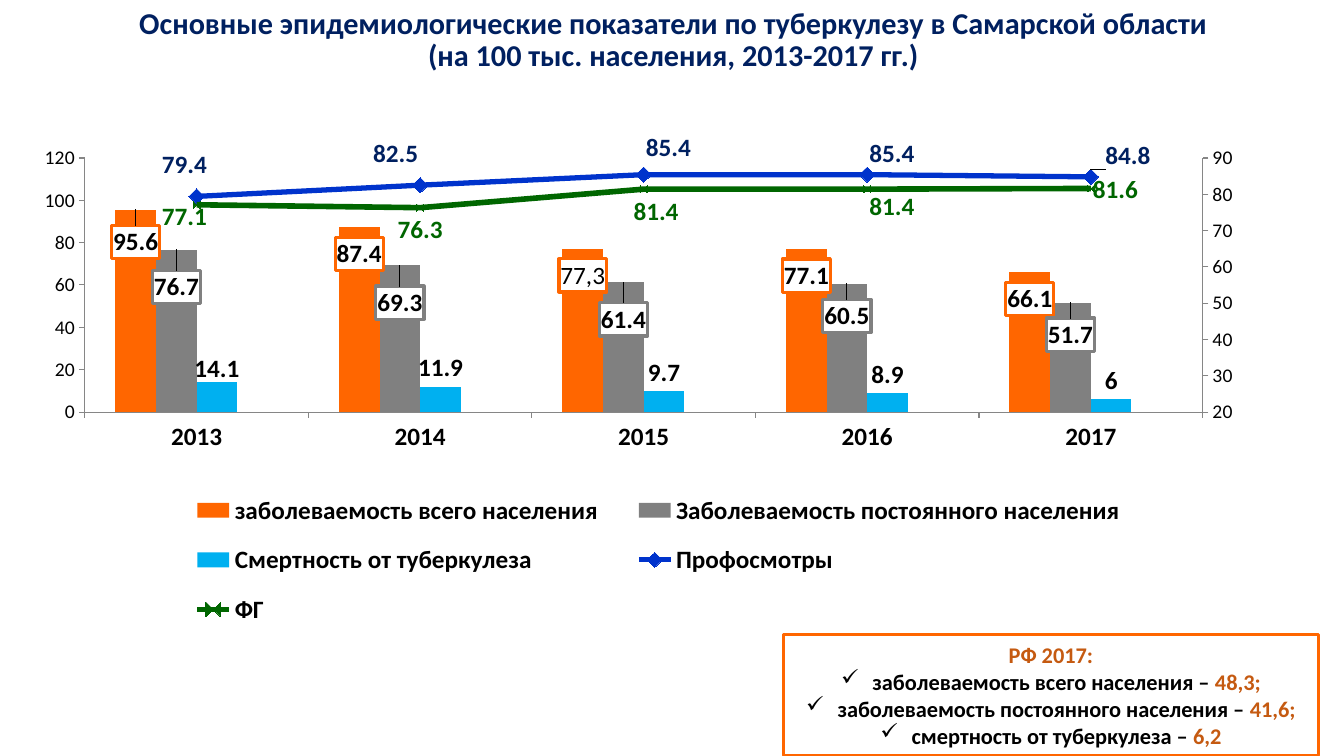
"""Build the tuberculosis indicators slide."""
from copy import deepcopy
from dataclasses import dataclass

from pptx import Presentation
from pptx import util as u
from pptx.chart import data
from pptx.dml.color import RGBColor
from pptx.enum import chart as ch, shapes, text
from pptx.oxml import parse_xml
from pptx.oxml.ns import nsdecls

NS = nsdecls("c", "a")
POS = ch.XL_LABEL_POSITION


@dataclass(frozen=True)
class Theme:
    """Colours, font and type sizes of the slide."""
    font: str = "Calibri"
    navy: str = "002060"
    black: str = "000000"
    white: str = "FFFFFF"
    orange: str = "FF6600"
    rust: str = "C55A11"
    grey: str = "808080"
    axis: str = "868686"
    sky: str = "00B0F0"
    blue: str = "0033CC"
    green: str = "006600"
    title: float = 21.6
    label: float = 18
    note: float = 16
    tick: float = 14


T = Theme()
YEARS = ["2013", "2014", "2015", "2016", "2017"]
EMPTY = [None] * 5
BARS = [
    dict(name="заболеваемость всего населения", vals=[95.6, 87.4, 77.2, 77.1, 66.1],
         color=T.orange, ink=T.black, frame=True, pos=POS.OUTSIDE_END, texts={2: "77,3"},
         shift=[(0, 0.1), (0, 0.09), (0, 0.09), (0, 0.09), (0, 0.09)]),
    dict(name="Заболеваемость постоянного населения", vals=[76.7, 69.3, 61.4, 60.5, 51.7],
         color=T.grey, ink=T.black, frame=True, pos=POS.OUTSIDE_END,
         shift=[(0, 0.11), (0, 0.11), (0, 0.11), (0, 0.1), (0, 0.1)]),
    dict(name="Смертность от туберкулеза", vals=[14.1, 11.9, 9.7, 8.9, 6],
         color=T.sky, ink=T.black, pos=POS.OUTSIDE_END,
         shift=[(0, 0.01), (0, 0), (0, 0), (0, 0), (0, 0)]),
    dict(name="Series 4", vals=EMPTY, color=T.rust),
]
LINES = [
    dict(name="Профосмотры", vals=[79.4, 82.5, 85.4, 85.4, 84.8], color=T.blue, ink=T.navy,
         width=3.78, pos=POS.ABOVE, marker=ch.XL_MARKER_STYLE.DIAMOND,
         shift=[(-0.01, -0.01), (-0.02, -0.01), (0.02, 0), (0.02, 0.01), (0.03, 0.01)]),
    dict(name="Series 6", vals=EMPTY, color=T.rust, width=2.25),
    dict(name="ФГ", vals=[77.1, 76.3, 81.4, 81.4, 81.6], color=T.green, ink=T.green,
         width=4, pos=POS.BELOW,
         shift=[(-0.01, -0.02), (0, 0), (0.01, 0), (0.02, -0.01), (0.02, -0.04)]),
]
FACTS = [("заболеваемость всего населения – ", "48,3;"),
         ("заболеваемость постоянного населения – ", "41,6;"),
         ("смертность от туберкулеза – ", "6,2")]


def assign(obj, **values):
    """Set each given attribute on an object."""
    for key, value in values.items():
        setattr(obj, key, value)


def layout(x, y, w=None, h=None, inner=False):
    """Return a manual chart layout element."""
    parts = ['<c:layoutTarget val="inner"/>'] if inner else []
    if w:
        parts += ['<c:xMode val="edge"/><c:yMode val="edge"/>']
    parts += [f'<c:{k} val="{v}"/>' for k, v in zip("xywh", (x, y, w, h)) if v is not None]
    return parse_xml(f'<c:layout {NS}><c:manualLayout>{"".join(parts)}</c:manualLayout></c:layout>')


class SlideMaker:
    """Hold the theme and the current slide."""

    def __init__(self, prs, theme):
        """Start a blank slide."""
        self.t = theme
        self.s = prs.slides.add_slide(prs.slide_layouts[6])

    def font(self, font, size, color, bold=True):
        """Apply the theme font."""
        assign(font, name=self.t.font, size=u.Pt(size), bold=bold)
        font.color.rgb = RGBColor.from_string(color)

    def run(self, p, words, size, color):
        """Add a formatted run."""
        r = p.add_run()
        r.text = words
        self.font(r.font, size, color)

    def title(self, box, lines):
        """Add the centred heading."""
        tf = self.s.shapes.add_textbox(*map(u.Cm, box)).text_frame
        assign(tf, word_wrap=True, vertical_anchor=text.MSO_ANCHOR.MIDDLE)
        p = tf.paragraphs[0]
        assign(p, alignment=text.PP_ALIGN.CENTER, line_spacing=0.9)
        for i, line in enumerate(lines):
            if i:
                p.add_line_break()
            self.run(p, line, self.t.title, self.t.navy)

    def note(self, box, heading, facts):
        """Add the framed box with check-marked facts."""
        sp = self.s.shapes.add_shape(shapes.MSO_SHAPE.RECTANGLE, *map(u.Cm, box))
        sp.shadow.inherit = False
        sp.fill.solid()
        sp.fill.fore_color.rgb = RGBColor.from_string(self.t.white)
        sp.line.color.rgb = RGBColor.from_string(self.t.orange)
        sp.line.width = u.Pt(2.25)
        tf = sp.text_frame
        assign(tf, word_wrap=True, vertical_anchor=text.MSO_ANCHOR.MIDDLE)
        p = tf.paragraphs[0]
        p.alignment = text.PP_ALIGN.CENTER
        self.run(p, heading, self.t.note, self.t.rust)
        for words, value in facts:
            p = tf.add_paragraph()
            p.alignment = text.PP_ALIGN.CENTER
            pPr = p._p.get_or_add_pPr()
            pPr.set("marL", str(u.Cm(0.79)))
            pPr.set("indent", str(-u.Cm(0.79)))
            pPr.append(parse_xml(f'<a:buChar {NS} char="✓"/>'))
            self.run(p, words, self.t.note, self.t.black)
            self.run(p, value, self.t.note, self.t.rust)

    def axis(self, axis, size, bold):
        """Style a chart axis."""
        assign(axis, has_major_gridlines=False, major_tick_mark=ch.XL_TICK_MARK.OUTSIDE)
        axis.format.line.color.rgb = RGBColor.from_string(self.t.axis)
        self.font(axis.tick_labels.font, size, self.t.black, bold)

    def second_axis(self, plot_area, count):
        """Move the last series to a line plot on the right axis."""
        line = parse_xml(f'<c:lineChart {NS}><c:grouping val="standard"/><c:varyColors val="0"/>'
                         '<c:marker val="1"/><c:axId val="501"/><c:axId val="502"/></c:lineChart>')
        for ser in plot_area.xpath("c:barChart/c:ser")[-count:]:
            for flag in ser.xpath("c:invertIfNegative"):
                ser.remove(flag)
            line.insert(len(line) - 3, ser)
        plot_area.xpath("c:barChart")[0].addnext(line)
        last = plot_area.xpath("c:valAx")[0]
        changes = {"c:catAx": {"axId": 501, "crossAx": 502, "delete": 1},
                   "c:valAx": {"axId": 502, "crossAx": 501, "axPos": "r", "crosses": "max",
                               "scaling/c:min": 20, "scaling/c:max": 90, "majorUnit": 10}}
        for tag, values in changes.items():
            ax = deepcopy(plot_area.xpath(tag)[0])
            for name, value in values.items():
                ax.xpath(f"c:{name}")[0].set("val", str(value))
            last.addnext(ax)
            last = ax

    def labels(self, ser, row):
        """Place the value labels of one series."""
        for i, (dx, dy) in enumerate(row["shift"]):
            lbl = ser.points[i].data_label
            lbl.position = row["pos"]
            words = row.get("texts", {}).get(i)
            if words:
                r = lbl.text_frame.paragraphs[0].add_run()
                r.text = words
                self.font(r.font, self.t.label, row["ink"], False)
            else:
                self.font(lbl.font, self.t.label, row["ink"])
            el = lbl._dLbl
            el.insert(1, layout(dx, dy))
            if row.get("frame"):
                fill, edge = (f'<a:solidFill><a:srgbClr val="{c}"/></a:solidFill>'
                              for c in (self.t.white, row["color"]))
                after = (el.xpath("c:txPr") or el.xpath("c:dLblPos"))[0]
                after.addprevious(parse_xml(
                    f'<c:spPr {NS}>{fill}<a:ln w="{u.Pt(2.25)}">{edge}</a:ln></c:spPr>'))

    def chart(self, box, years, bars, lines):
        """Add the combined column and line chart."""
        cd = data.CategoryChartData()
        cd.categories = years
        for row in bars + lines:
            cd.add_series(row["name"], row["vals"])
        chart = self.s.shapes.add_chart(
            ch.XL_CHART_TYPE.COLUMN_CLUSTERED, *map(u.Cm, box), cd).chart
        assign(chart, has_title=False, has_legend=True)
        self.font(chart.font, self.t.label, self.t.black, False)
        self.axis(chart.category_axis, self.t.label, True)
        self.axis(chart.value_axis, self.t.tick, False)
        assign(chart.value_axis, minimum_scale=0, maximum_scale=120, major_unit=20)
        area = chart._chartSpace.xpath("c:chart/c:plotArea")[0]
        for old in area.xpath("c:layout"):
            area.remove(old)
        area.insert(0, layout(0.055, 0.036, 0.906, 0.483, True))
        self.second_axis(area, len(lines))
        columns, curves = chart.plots
        assign(columns, gap_width=150, vary_by_categories=False)
        for ser, row in zip([*columns.series, *curves.series], bars + lines):
            color = RGBColor.from_string(row["color"])
            if "width" in row:
                ser.smooth = False
                ser.format.line.color.rgb = color
                ser.format.line.width = u.Pt(row["width"])
            else:
                ser.format.fill.solid()
                ser.format.fill.fore_color.rgb = color
            if "marker" in row:
                assign(ser.marker, style=row["marker"], size=11)
                ser.marker.format.fill.solid()
                ser.marker.format.fill.fore_color.rgb = color
                ser.marker.format.line.color.rgb = color
            if "shift" in row:
                self.labels(ser, row)
        self.legend(chart.legend, [i for i, row in enumerate(bars + lines) if "shift" not in row])

    def legend(self, legend, skipped):
        """Style the legend and leave out the empty series."""
        assign(legend, position=ch.XL_LEGEND_POSITION.BOTTOM, include_in_layout=False)
        self.font(legend.font, self.t.label, self.t.black)
        el = legend._element
        for old in el.xpath("c:layout"):
            el.remove(old)
        el.insert(1, layout(0.12, 0.64, 0.8, 0.32))
        for i in reversed(skipped):
            el.insert(1, parse_xml(f'<c:legendEntry {NS}><c:idx val="{i}"/>'
                                   '<c:delete val="1"/></c:legendEntry>'))


def main():
    """Build and save the slide."""
    prs = Presentation()
    assign(prs, slide_width=u.Cm(33.87), slide_height=u.Cm(19.05))
    maker = SlideMaker(prs, T)
    maker.title((1.73, 0, 30.48, 2.06),
                ["Основные эпидемиологические показатели по туберкулезу в Самарской области",
                 "(на 100 тыс. населения, 2013-2017 гг.)"])
    maker.chart((0.43, 3.35, 31.09, 13.41), YEARS, BARS, LINES)
    maker.note((19.74, 15.98, 13.49, 3.07), "РФ 2017:", FACTS)
    prs.save("out.pptx")


if __name__ == "__main__":
    main()
